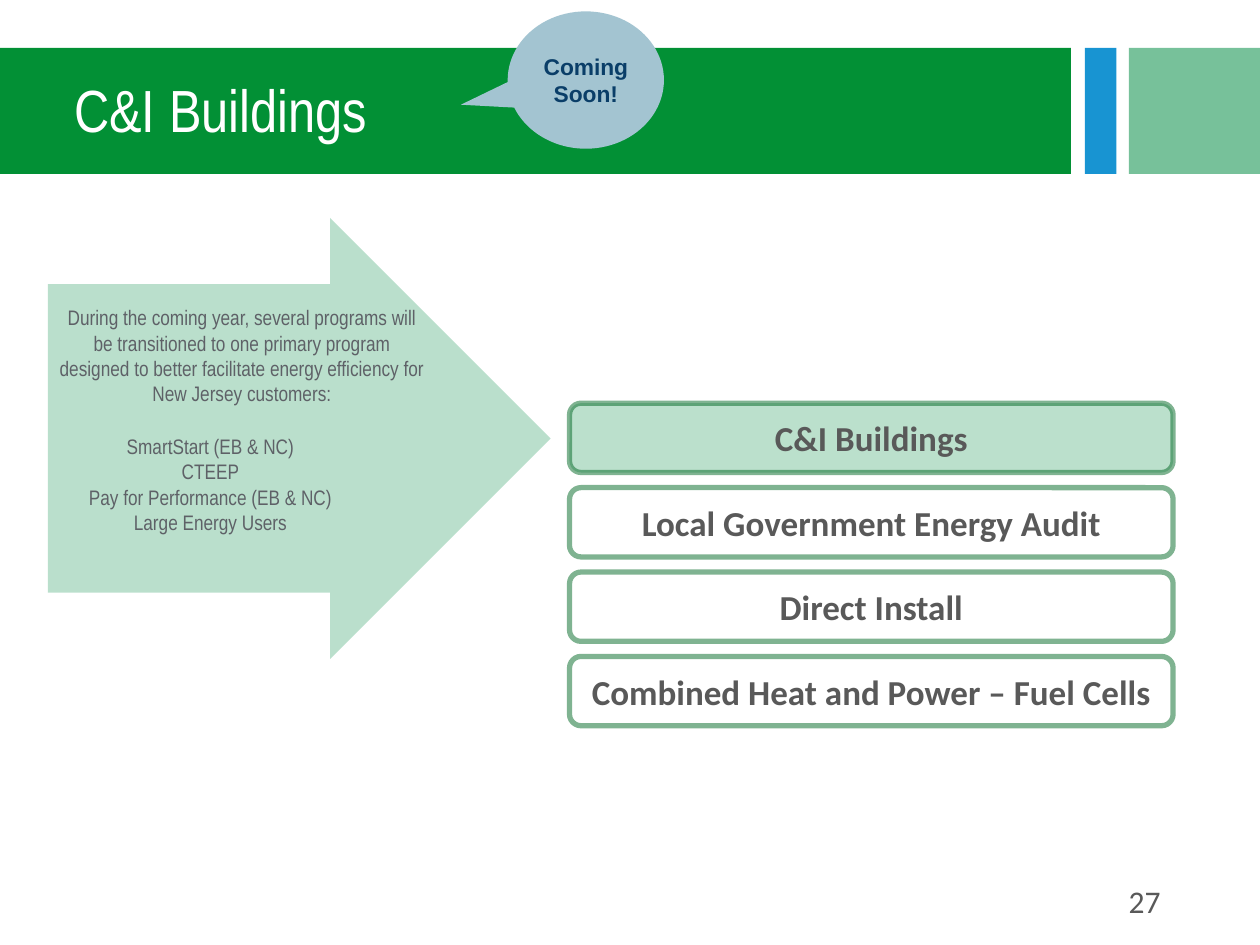
from dataclasses import dataclass

from lxml import etree
from pptx import Presentation
from pptx import util as u
from pptx.dml.color import RGBColor
from pptx.enum import shapes, text
from pptx.oxml.ns import qn

COLUMNS, ROWS = 100, 75
PRESET = shapes.MSO_SHAPE
ALIGN = text.PP_ALIGN


@dataclass(frozen=True)
class Theme:
    green: str = "029035"
    blue: str = "1894D2"
    mint: str = "77C19A"
    pale_mint: str = "BBE0CC"
    outline: str = "016824"
    bubble: str = "A3C4D1"
    navy: str = "0A3E68"
    white: str = "FFFFFF"
    dark: str = "595959"
    grey: str = "5E6167"
    narrow: str = "Arial Narrow"
    sans: str = "Arial"
    label: str = "Calibri"
    title_size: int = 34
    option_size: int = 20
    number_size: int = 18
    bubble_size: int = 13
    body_size: int = 12


def set_alpha(color_format, percent):
    """Make a solid fill see-through."""
    color = color_format._xPr.find(".//" + qn("a:srgbClr"))
    etree.SubElement(color, qn("a:alpha")).set("val", str(percent * 1000))


class SlideBuilder:
    """Places styled elements on a grid of 100 columns by 75 rows."""

    def __init__(self, deck, theme):
        self.theme = theme
        self.cell_width = deck.slide_width / COLUMNS
        self.cell_height = deck.slide_height / ROWS
        self.slide = deck.slides.add_slide(deck.slide_layouts[1])

    def area(self, column, row, columns, rows):
        return (u.Emu(round(column * self.cell_width)), u.Emu(round(row * self.cell_height)),
                u.Emu(round(columns * self.cell_width)), u.Emu(round(rows * self.cell_height)))

    def style(self, para, font, size, color, bold=False, align=ALIGN.CENTER):
        para.alignment = align
        for span in para.runs:
            span.font.name, span.font.size, span.font.bold = font, u.Pt(size), bold
            span.font.color.rgb = RGBColor.from_string(color)

    def shape(self, preset, place, fill=None, alpha=None, adjustments=()):
        shape = self.slide.shapes.add_shape(preset, *self.area(*place))
        shape.shadow.inherit = False
        shape.line.fill.background()
        if fill:
            shape.fill.solid()
            shape.fill.fore_color.rgb = RGBColor.from_string(fill)
            if alpha:
                set_alpha(shape.fill, alpha)
        else:
            shape.fill.background()
        for index, value in enumerate(adjustments):
            shape.adjustments[index] = value
        return shape

    def place(self, holder, place):
        """Move a placeholder to the grid area, in front of what is drawn so far."""
        holder.left, holder.top, holder.width, holder.height = self.area(*place)
        self.slide.shapes._spTree.append(holder._element)
        frame = holder.text_frame
        frame.word_wrap, frame.auto_size = True, text.MSO_AUTO_SIZE.NONE
        return frame

    def title(self, words, place):
        frame = self.place(self.slide.shapes.title, place)
        frame.text = words
        frame.vertical_anchor = text.MSO_ANCHOR.MIDDLE
        frame.margin_left = u.Inches(0.6)
        para = frame.paragraphs[0]
        para.line_spacing = 0.9
        self.style(para, self.theme.narrow, self.theme.title_size, self.theme.white,
                   align=ALIGN.LEFT)

    def body(self, intro, items, place):
        """Indented introduction, then plain centred lines."""
        frame = self.place(self.slide.placeholders[1], place)
        frame.vertical_anchor = text.MSO_ANCHOR.TOP
        frame.text = "\n".join([intro, *items])
        for index, para in enumerate(frame.paragraphs):
            props = para._p.get_or_add_pPr()
            props.set("marL", str(u.Inches(0 if index else 0.5)))
            props.set("indent", "0")
            etree.SubElement(props, qn("a:buNone"))
            para.line_spacing = 1.0
            para.space_before = u.Pt(0)
            para.space_after = u.Pt(0 if index else 16)
            self.style(para, self.theme.narrow, self.theme.body_size, self.theme.grey)

    def option(self, words, place, fill=None):
        shape = self.shape(PRESET.ROUNDED_RECTANGLE, place, fill)
        shape.line.width = u.Pt(3)
        shape.line.color.rgb = RGBColor.from_string(self.theme.outline)
        set_alpha(shape.line.fill, 50)
        shape.text_frame.text = words
        self.style(shape.text_frame.paragraphs[0], self.theme.label,
                   self.theme.option_size, self.theme.dark, bold=True)

    def callout(self, words, place, adjustments):
        shape = self.shape(PRESET.OVAL_CALLOUT, place, self.theme.bubble,
                           adjustments=adjustments)
        shape.text_frame.text = words
        self.style(shape.text_frame.paragraphs[0], self.theme.sans,
                   self.theme.bubble_size, self.theme.navy, bold=True)

    def page_number(self, number, place):
        box = self.slide.shapes.add_textbox(*self.area(*place))
        box.text_frame.word_wrap = True
        box.text_frame.text = str(number)
        self.style(box.text_frame.paragraphs[0], self.theme.label,
                   self.theme.number_size, self.theme.dark, align=ALIGN.RIGHT)


def main():
    deck = Presentation()
    deck.slide_width, deck.slide_height = u.Inches(10), u.Inches(7.5)
    theme = Theme()
    page = SlideBuilder(deck, theme)

    banner = ((0, 85, theme.green), (86.1, 2.5, theme.blue), (89.6, 10.4, theme.mint))
    for column, columns, color in banner:
        page.shape(PRESET.RECTANGLE, (column, 3.8, columns, 10), color)
    page.title("C&I Buildings", (-0.1, 4, 85.1, 10))
    page.callout("Coming Soon!", (40.3, 0.9, 12.4, 10.9), (-0.8, 0.18))

    page.shape(PRESET.RIGHT_ARROW, (3.8, 17.3, 39.9, 35), theme.mint, 50, (0.7, 0.5))
    page.body(
        "During the coming year, several programs will be transitioned to one primary "
        "program designed to better facilitate energy efficiency for New Jersey customers:",
        ["SmartStart (EB & NC)", "CTEEP", "Pay for Performance (EB & NC)",
         "Large Energy Users"],
        (-1.3, 23.7, 36, 23.5))

    options = ("C&I Buildings", "Local Government Energy Audit", "Direct Install",
               "Combined Heat and Power – Fuel Cells")
    for index, words in enumerate(options):
        page.option(words, (45.2, 32 + 6.7 * index, 47.9, 5.5),
                    None if index else theme.pale_mint)
    page.page_number(27, (70.6, 69.5, 22.5, 4))

    deck.save("out.pptx")


if __name__ == "__main__":
    main()
